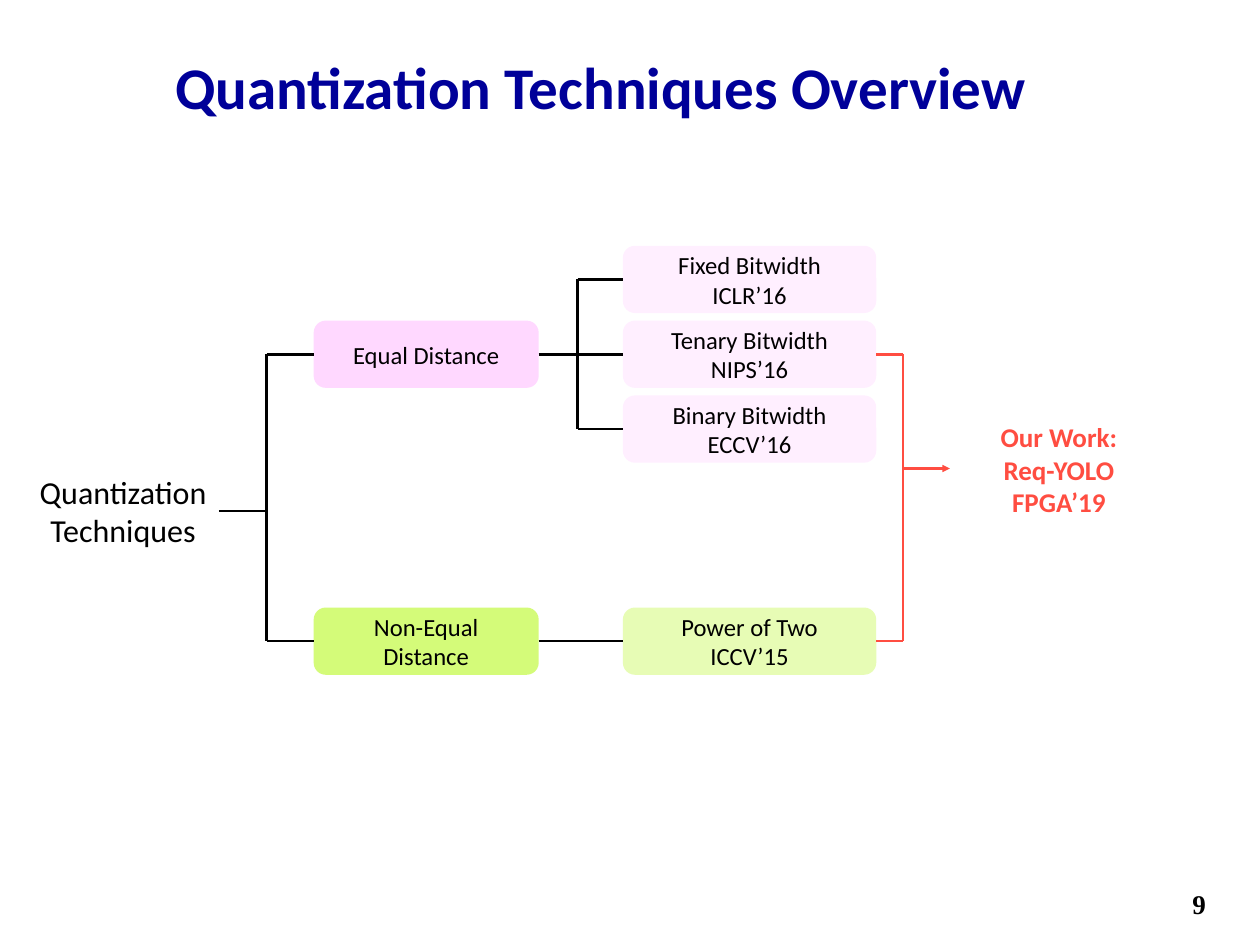
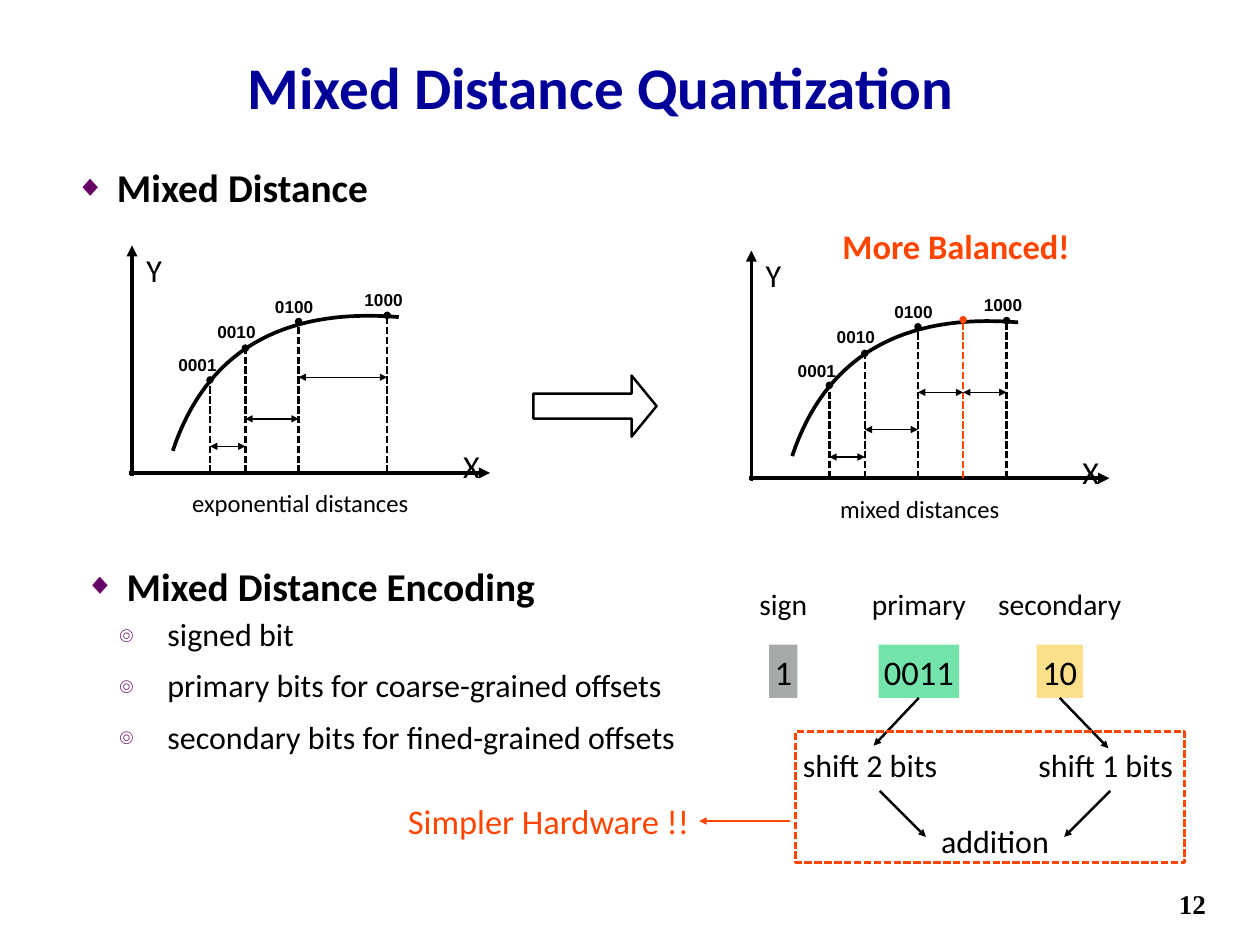
from itertools import pairwise

from pptx import Presentation, util as u
from pptx.dml.color import RGBColor
from pptx.enum import dml, shapes, text
from pptx.oxml.ns import qn
from lxml import etree

# Shared look
BLACK, NAVY, PURPLE = "000000", "000099", "660066"
CORAL, ORANGE = "FF4D41", "FF4500"
PINK, LIME = "FFD8FF", "D4FB79"
TITLE = dict(name="Calibri", size=48, bold=True, color=NAVY)
PAGE_NUMBER = dict(name="Times New Roman", size=22, bold=True)
HEADING = dict(name="Calibri", size=32, bold=True)
CODE = dict(name="Arial", size=14, bold=True)


def body(size, color=BLACK, bold=False):
    return dict(name="Calibri", size=size, color=color, bold=bold)


def rgb(value):
    return RGBColor.from_string(value)


def sub(parent, tag, **attributes):
    return etree.SubElement(parent, qn(tag), attributes)


# Text
def bullet(paragraph, char, margin):
    props = paragraph._p.get_or_add_pPr()
    props.set("marL", str(u.Inches(margin)))
    props.set("indent", str(u.Inches(-0.55)))
    sub(sub(props, "a:buClr"), "a:srgbClr", val=PURPLE)
    sub(props, "a:buSzPct", val="75000")
    sub(props, "a:buFont", typeface="Arial")
    sub(props, "a:buChar", char=char)


def write(frame, content, style, align="CENTER", anchor="MIDDLE", inset=0.06,
          wrap=False, spacing=None, gap=0, mark=None):
    frame.word_wrap = wrap
    frame.vertical_anchor = text.MSO_ANCHOR[anchor]
    for side in ("left", "top", "right", "bottom"):
        setattr(frame, f"margin_{side}", u.Inches(inset))
    formats = {"color": BLACK, **style}
    color = formats.pop("color")
    formats["size"] = u.Pt(formats["size"])
    for i, words in enumerate(content.split("\n")):
        paragraph = frame.add_paragraph() if i else frame.paragraphs[0]
        paragraph.alignment = text.PP_ALIGN[align]
        if spacing:
            paragraph.line_spacing = spacing
        if i and gap:
            paragraph.space_before = u.Pt(gap)
        if mark:
            bullet(paragraph, *mark)
        run = paragraph.add_run()
        run.text = words
        for key, value in formats.items():
            setattr(run.font, key, value)
        run.font.color.rgb = rgb(color)


def text_box(slide, box, content, style, **options):
    frame = slide.shapes.add_textbox(*map(u.Inches, box)).text_frame
    write(frame, content, style, **options)


def label(slide, center, content, style, width=2.7, **options):
    """One or more centred lines around a point."""
    height = 0.5
    box = (center[0] - width / 2, center[1] - height / 2, width, height)
    text_box(slide, box, content, style, **options)


# Shapes and lines
def outline(line, color, width, dash=False):
    line.color.rgb = rgb(color)
    line.width = u.Pt(width)
    if dash:
        line.dash_style = dml.MSO_LINE.SQUARE_DOT


def block(slide, kind, box, fill=None, opacity=100, line=None, dash=False,
          adjust=(), content=None, size=20):
    shape = slide.shapes.add_shape(shapes.MSO_SHAPE[kind], *map(u.Inches, box))
    shape.shadow.inherit = False
    for i, value in enumerate(adjust):
        shape.adjustments[i] = value
    if fill:
        shape.fill.solid()
        shape.fill.fore_color.rgb = rgb(fill)
        if opacity < 100:
            tint = shape.fill._xPr.find(qn("a:solidFill"))[0]
            sub(tint, "a:alpha", val=str(opacity * 1000))
    else:
        shape.fill.background()
    if line:
        outline(shape.line, line, 2, dash)
    else:
        shape.line.fill.background()
    if content:
        write(shape.text_frame, content, body(size), inset=0.03)
    return shape


def link(slide, start, end, color=BLACK, width=2, head=None, tail=None, dash=False):
    """Each end is an (x, y) point or a (shape, site) pair."""
    fixed = [isinstance(point[0], (int, float)) for point in (start, end)]
    places = [u.Inches(v) for point, free in zip((start, end), fixed)
              for v in (point if free else (0, 0))]
    connector = slide.shapes.add_connector(shapes.MSO_CONNECTOR.STRAIGHT, *places)
    if not fixed[0]:
        connector.begin_connect(*start)
    if not fixed[1]:
        connector.end_connect(*end)
    outline(connector.line, color, width, dash)
    ln = connector.line._get_or_add_ln()
    for tag, kind in (("a:headEnd", head), ("a:tailEnd", tail)):
        if kind:
            sub(ln, tag, type=kind)
    sub(connector._element.spPr, "a:effectLst")


def curve(slide, points, steps=32):
    """Cubic curve through four control points."""
    def at(t):
        weights = ((1 - t) ** 3, 3 * t * (1 - t) ** 2, 3 * t * t * (1 - t), t ** 3)
        return tuple(u.Inches(sum(w * p[axis] for w, p in zip(weights, points)))
                     for axis in (0, 1))

    builder = slide.shapes.build_freeform(*at(0))
    builder.add_line_segments([at(i / steps) for i in range(1, steps + 1)], close=False)
    shape = builder.convert_to_shape()
    shape.shadow.inherit = False
    shape.fill.background()
    outline(shape.line, BLACK, 3)


def new_slide(deck, title, number):
    slide = deck.slides.add_slide(deck.slide_layouts[6])
    text_box(slide, (0.38, 0.5, 12.8, 1.05), title, TITLE, inset=0, wrap=True, spacing=0.9)
    text_box(slide, (13.01, 10.03, 0.6, 0.35), number, PAGE_NUMBER,
             align="RIGHT", inset=0, wrap=True)
    return slide


# Slide: overview tree
def overview(deck):
    slide = new_slide(deck, "Quantization Techniques Overview", "9")
    equal_y, other_y, row_step = 4, 7.24, 0.845
    root_x, branch_x, work_x = 3.01, 6.52, 10.19

    def node(left, width, middle, content, fill, opacity=100):
        return block(slide, "ROUNDED_RECTANGLE", (left, middle - 0.38, width, 0.76),
                     fill, opacity, adjust=[0.18], content=content)

    # Two families and their methods
    equal = node(3.54, 2.54, equal_y, "Equal Distance", PINK)
    other = node(3.54, 2.54, other_y, "Non-Equal\nDistance", LIME)
    methods = ["Fixed Bitwidth\nICLR’16", "Tenary Bitwidth\nNIPS’16", "Binary Bitwidth\nECCV’16"]
    rows = [equal_y + (i - 1) * row_step for i in range(3)]
    fixed, tenary, binary = [node(7.03, 2.86, y, words, PINK, 40)
                             for y, words in zip(rows, methods)]
    power = node(7.03, 2.86, other_y, "Power of Two\nICCV’15", LIME, 55)

    # Root and its branches
    label(slide, (1.39, 5.77), "Quantization\nTechniques", body(26))
    link(slide, (2.47, 5.77), (root_x, 5.77))
    link(slide, (root_x, equal_y), (root_x, other_y))
    for y, family in ((equal_y, equal), (other_y, other)):
        link(slide, (root_x, y), (family, 1))

    # Family branches
    link(slide, (equal, 3), (tenary, 1))
    link(slide, (other, 3), (power, 1))
    link(slide, (branch_x, rows[0]), (branch_x, rows[2]))
    for y, method in ((rows[0], fixed), (rows[2], binary)):
        link(slide, (branch_x, y), (method, 1))

    # Our work
    for y, method in ((equal_y, tenary), (other_y, power)):
        link(slide, (method, 3), (work_x, y), CORAL)
    link(slide, (work_x, other_y), (work_x, equal_y), CORAL)
    link(slide, (work_x, 5.29), (10.72, 5.29), CORAL, tail="triangle")
    label(slide, (11.95, 5.3), "Our Work:\nReq-YOLO\nFPGA’19", body(22, CORAL, True))


# Slide: mixed distance
def plot(slide, dx, dy, caption, caption_x, levels, extra=None):
    """Curve with coded points; levels hold the height of each distance arrow."""
    def at(x, y):
        return x + dx, y + dy

    base = 5.34
    points = [(2.37, 4.29, "0001", 2.23, 4.12), (2.77, 3.93, "0010", 2.67, 3.74),
              (3.37, 3.63, "0100", 3.32, 3.46), (4.37, 3.56, "1000", 4.33, 3.38)]
    curve(slide, [at(*p) for p in ((1.95, 5.09), (2.32, 3.98), (3.17, 3.47), (4.5, 3.58))])
    link(slide, at(1.46, base), at(5.53, base), width=3, tail="triangle")
    link(slide, at(1.49, 5.37), at(1.49, 2.77), width=3, tail="triangle")
    label(slide, at(5.32, 5.11), "X", body(26), spacing=1.7)
    label(slide, at(1.74, 2.89), "Y", body(26), spacing=1.7)
    label(slide, at(caption_x, 5.68), caption, body(20))

    for x, y, code, code_x, code_y in points:
        link(slide, at(x, base), at(x, y), tail="oval", dash=True)
        label(slide, at(code_x, code_y), code, CODE)
    stops = [point[0] for point in points]
    if extra:
        link(slide, at(extra[0], base), at(*extra), ORANGE, tail="oval", dash=True)
        stops = sorted(stops + [extra[0]])
    for (left, right), level in zip(pairwise(stops), levels):
        link(slide, at(right, level), at(left, level), width=1,
             head="triangle", tail="triangle")


def encoding(slide):
    # Bit fields
    fields = [("sign", "1", 8.84, 0.32, "A6AAA9", 100),
              ("primary", "0011", 10.37, 0.91, "00CD66", 55),
              ("secondary", "10", 11.96, 0.52, "F8BA00", 46)]
    cells = {}
    for name, bits, x, width, fill, opacity in fields:
        label(slide, (x, 6.82), name, body(24))
        cells[name] = block(slide, "RECTANGLE", (x - width / 2, 7.28, width, 0.6),
                            fill, opacity, content=bits, size=28)

    # Shift and add
    link(slide, (cells["primary"], 2), (9.86, 8.42), tail="triangle")
    link(slide, (cells["secondary"], 2), (12.51, 8.45), tail="triangle")
    for x, words in ((9.82, "shift 2 bits"), (12.48, "shift 1 bits")):
        label(slide, (x, 8.64), words, body(26))
    for start, end in ((9.93, 10.45), (12.53, 12.01)):
        link(slide, (start, 8.93), (end, 9.45), tail="triangle")
    label(slide, (11.23, 9.49), "addition", body(26))

    # Hardware remark
    block(slide, "RECTANGLE", (8.98, 8.26, 4.39, 1.48), line=ORANGE, dash=True)
    link(slide, (8.92, 9.27), (7.89, 9.27), ORANGE, tail="triangle")
    label(slide, (6.19, 9.27), "Simpler Hardware !!", body(28, ORANGE), width=3.4)


def mixed_distance(deck):
    slide = new_slide(deck, "Mixed Distance Quantization", "12")
    listing = dict(align="LEFT", wrap=True)
    heading = dict(listing, spacing=1.2, mark=("◆", 0.47))
    text_box(slide, (0.78, 1.67, 5.2, 0.68), "Mixed Distance", HEADING,
             anchor="TOP", inset=0.07, **heading)
    plot(slide, 0, 0, "exponential distances", 3.39, [5.04, 4.73, 4.26])
    block(slide, "RIGHT_ARROW", (6.02, 4.24, 1.39, 0.69), line=BLACK, adjust=[0.41, 0.41])
    plot(slide, 6.99, 0.06, "mixed distances", 3.39, [5.1, 4.79, 4.37, 4.37], extra=(3.88, 3.55))
    label(slide, (10.79, 2.77), "More Balanced!", body(28, ORANGE, True), width=3.4)

    text_box(slide, (0.9, 6.23, 5.6, 0.65), "Mixed Distance Encoding", HEADING, **heading)
    text_box(slide, (0.84, 6.88, 7.2, 1.74),
             "signed bit\nprimary bits for coarse-grained offsets\n"
             "secondary bits for fined-grained offsets",
             body(26), anchor="TOP", gap=10.5, mark=("๏", 0.99), **listing)
    encoding(slide)


def main():
    deck = Presentation()
    deck.slide_width, deck.slide_height = u.Inches(14.22), u.Inches(10.67)
    overview(deck)
    mixed_distance(deck)
    deck.save("out.pptx")


if __name__ == "__main__":
    main()
